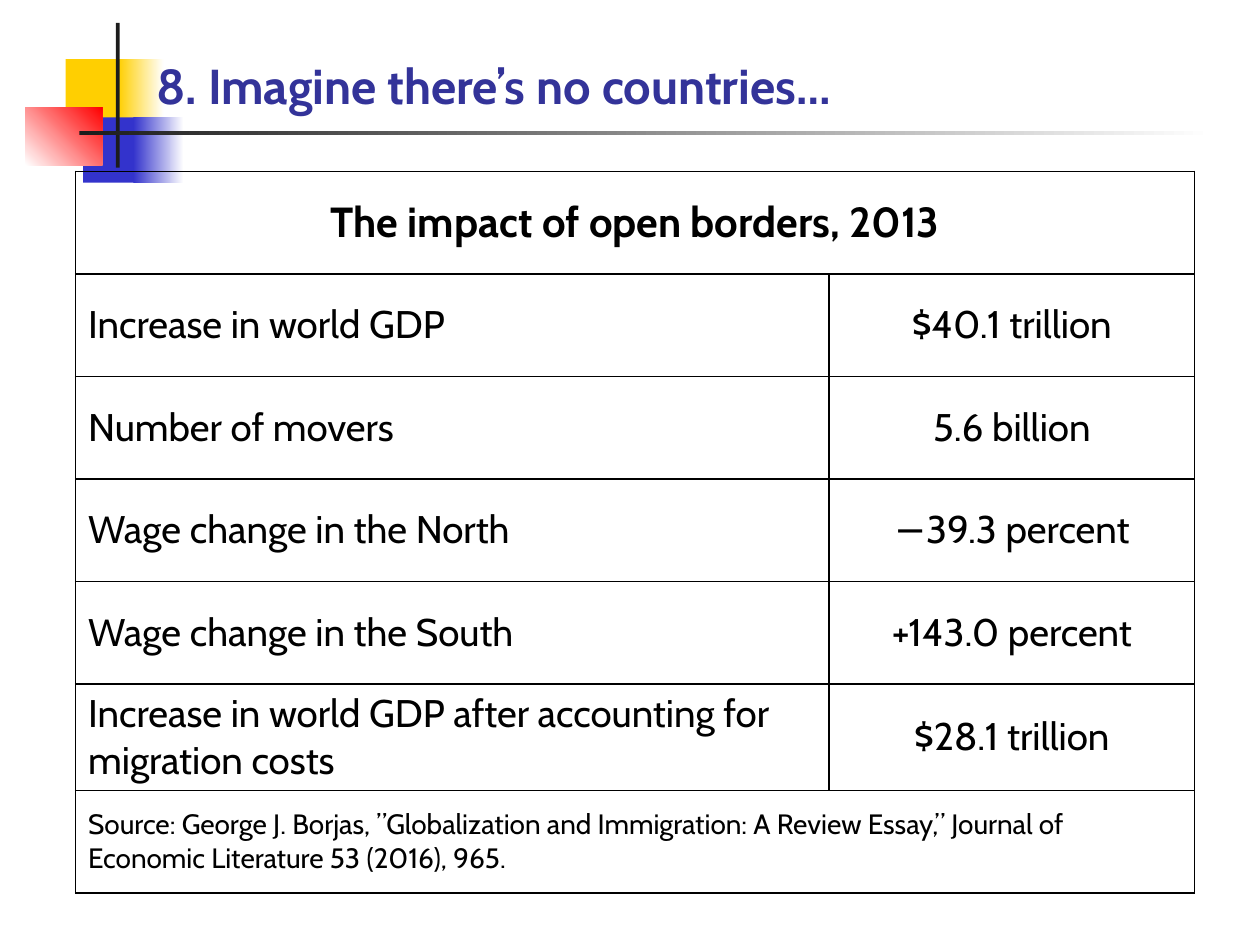
"""Build the open borders slide with its accent blocks, title and table."""
from lxml import etree
from pptx import Presentation
from pptx.dml.color import RGBColor
from pptx.enum import shapes, text
from pptx.oxml import ns
from pptx.util import Pt


def rgb(value):
    return RGBColor.from_string(value)


def write(tf, content, size=22, bold=False, color="000000", align=text.PP_ALIGN.LEFT):
    tf.word_wrap = True
    p = tf.paragraphs[0]
    p.alignment = align
    r = p.add_run()
    r.text = content
    r.font.name = "Cabin"
    r.font.size = Pt(size)
    r.font.bold = bold
    r.font.color.rgb = rgb(color)


prs = Presentation()
prs.slide_width, prs.slide_height = Pt(720), Pt(540)
s = prs.slides.add_slide(prs.slide_layouts[5])

blocks = [
    (37.5, 33.8, 34.5, 37.4, ["FFCF01"], 0),
    (67.7, 33.8, 25.9, 37.4, ["FFCF01", "FFFFFF"], 0),
    (47.5, 67, 33.1, 37.4, ["3333CC"], 0),
    (76.3, 67, 28.8, 37.4, ["3333CC", "FFFFFF"], 0),
    (14.4, 61.2, 44, 33.2, ["FFFFFF", "FF0000"], 45),
    (66.2, 13, 2.2, 82.8, ["1C1C1C"], 0),
    (45.4, 74.9, 648, 2.2, ["1C1C1C", "FFFFFF"], 0),
]
for left, top, width, height, colors, angle in blocks:
    sp = s.shapes.add_shape(shapes.MSO_SHAPE.RECTANGLE, Pt(left), Pt(top), Pt(width), Pt(height))
    sp.shadow.inherit = False
    sp.line.fill.background()
    if len(colors) == 1:
        sp.fill.solid()
        sp.fill.fore_color.rgb = rgb(colors[0])
    else:
        sp.fill.gradient()
        sp.fill.gradient_angle = angle
        for stop, color in zip(sp.fill.gradient_stops, colors):
            stop.color.rgb = rgb(color)

title = s.shapes.title
title.left, title.top, title.width, title.height = Pt(82.1), Pt(27.4), Pt(578.2), Pt(41.8)
tf = title.text_frame
tf.auto_size = text.MSO_AUTO_SIZE.NONE
tf.vertical_anchor = text.MSO_ANCHOR.BOTTOM
write(tf, "8. Imagine there’s no countries…", size=28, bold=True, color="333399")
s.shapes._spTree.append(title._element)

rows = [
    ["The impact of open borders, 2013"],
    ["Increase in world GDP", "$40.1 trillion"],
    ["Number of movers", "5.6 billion"],
    ["Wage change in the North", "−39.3 percent"],
    ["Wage change in the South", "+143.0 percent"],
    ["Increase in world GDP after accounting for migration costs", "$28.1 trillion"],
    ["Source: George J. Borjas, ”Globalization and Immigration: A Review Essay,” "
     "Journal of Economic Literature 53 (2016), 965."],
]
row_height = 58.6
table = s.shapes.add_table(len(rows), 2, Pt(43.2), Pt(97.9), Pt(639.4), Pt(row_height * len(rows))).table
table.first_row = table.horz_banding = False
table.columns[0].width, table.columns[1].width = Pt(430.6), Pt(208.8)

for i, values in enumerate(rows):
    table.rows[i].height = Pt(row_height)
    if len(values) == 1:
        table.cell(i, 0).merge(table.cell(i, 1))
    for j, value in enumerate(values):
        centred = i == 0 or j == 1
        write(table.cell(i, j).text_frame, value,
              size={0: 24, len(rows) - 1: 16}.get(i, 22), bold=i == 0,
              align=text.PP_ALIGN.CENTER if centred else text.PP_ALIGN.LEFT)

for cell in table.iter_cells():
    cell.vertical_anchor = text.MSO_ANCHOR.MIDDLE
    tcPr = cell._tc.get_or_add_tcPr()
    for side in ("lnL", "lnR", "lnT", "lnB"):
        ln = etree.SubElement(tcPr, ns.qn(f"a:{side}"), w=str(Pt(1)))
        fill = etree.SubElement(ln, ns.qn("a:solidFill"))
        etree.SubElement(fill, ns.qn("a:srgbClr"), val="000000")
    cell.fill.background()

prs.save("out.pptx")
